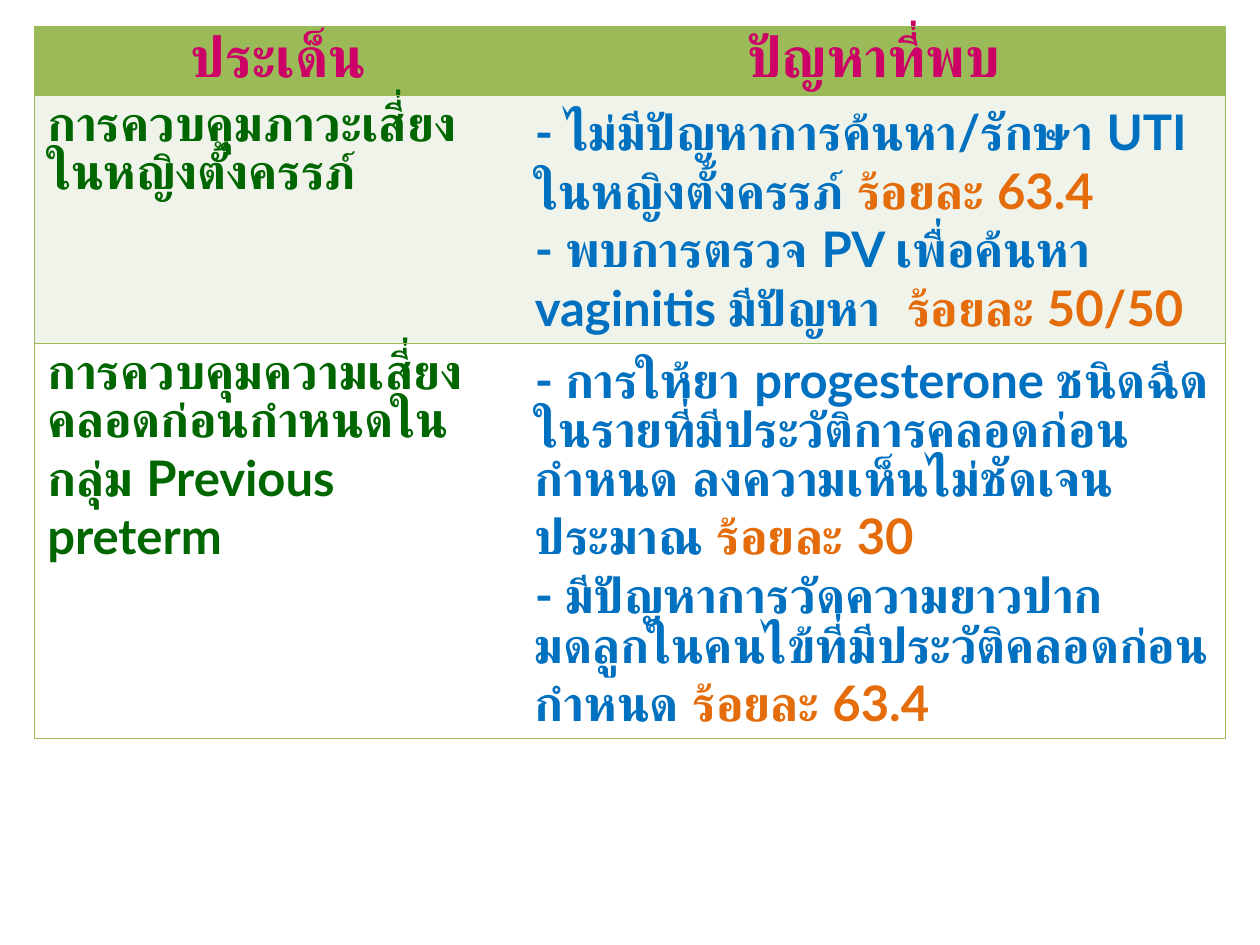
from dataclasses import dataclass

from lxml.etree import SubElement
from pptx import Presentation
from pptx.dml.color import RGBColor
from pptx.enum.text import PP_ALIGN as Align
from pptx.oxml.ns import qn
from pptx.util import Cm, Pt


@dataclass(frozen=True)
class Theme:
    font: str = "Lato"
    heading_size: int = 32
    body_size: int = 28
    heading: str = "CC0066"
    topic: str = "006600"
    finding: str = "0070C0"
    figure: str = "E46C0A"
    header_fill: str = "9BBB59"
    band_fill: str = "EFF3EA"
    plain_fill: str = "FFFFFF"
    border: str = "9BBB59"
    border_width: int = 1


@dataclass(frozen=True)
class Finding:
    text: str
    figure: str


@dataclass(frozen=True)
class Issue:
    topic: str
    findings: tuple[Finding, ...]
    fill: str


THEME = Theme()
COLUMN_WIDTHS = (9.83, 14.17)
ROW_HEIGHTS = (1.4, 5, 7.96)
HEADINGS = ("ประเด็น", "ปัญหาที่พบ")
ISSUES = (
    Issue(
        "การควบคุมภาวะเสี่ยงในหญิงตั้งครรภ์",
        (
            Finding("- ไม่มีปัญหาการค้นหา/รักษา UTI ในหญิงตั้งครรภ์ ", "ร้อยละ 63.4"),
            Finding("- พบการตรวจ PV เพื่อค้นหา vaginitis มีปัญหา  ", "ร้อยละ 50/50"),
        ),
        THEME.band_fill,
    ),
    Issue(
        "การควบคุมความเสี่ยงคลอดก่อนกำหนดในกลุ่ม Previous preterm",
        (
            Finding(
                "- การให้ยา progesterone ชนิดฉีดในรายที่มีประวัติการคลอดก่อนกำหนด "
                "ลงความเห็นไม่ชัดเจน ประมาณ ",
                "ร้อยละ 30",
            ),
            Finding(
                "- มีปัญหาการวัดความยาวปาก มดลูกในคนไข้ที่มีประวัติคลอดก่อนกำหนด ",
                "ร้อยละ 63.4",
            ),
        ),
        THEME.plain_fill,
    ),
)


def add_text(paragraph, text: str, *, color: str, size: int = THEME.body_size,
             align: Align = Align.LEFT) -> None:
    paragraph.alignment = align
    run = paragraph.add_run()
    run.text = text
    run.font.name = THEME.font
    run.font.size = Pt(size)
    run.font.bold = True
    run.font.color.rgb = RGBColor.from_string(color)


def style_cell(cell, fill: str, outer_side: str) -> None:
    cell.fill.solid()
    cell.fill.fore_color.rgb = RGBColor.from_string(fill)
    properties = cell._tc.get_or_add_tcPr()
    for position, side in enumerate(("L", "R", "T", "B")):
        line = SubElement(properties, qn(f"a:ln{side}"), w=str(Pt(THEME.border_width)))
        if side in (outer_side, "T", "B"):
            solid = SubElement(line, qn("a:solidFill"))
            SubElement(solid, qn("a:srgbClr"), val=THEME.border)
        else:
            SubElement(line, qn("a:noFill"))
        properties.insert(position, line)


def add_issue(row, issue: Issue) -> None:
    topic_cell, findings_cell = row.cells
    add_text(topic_cell.text_frame.paragraphs[0], issue.topic, color=THEME.topic)
    frame = findings_cell.text_frame
    for index, finding in enumerate(issue.findings):
        paragraph = frame.add_paragraph() if index else frame.paragraphs[0]
        add_text(paragraph, finding.text, color=THEME.finding)
        add_text(paragraph, finding.figure, color=THEME.figure)


def add_issue_table(slide) -> None:
    table = slide.shapes.add_table(
        len(ROW_HEIGHTS), len(COLUMN_WIDTHS), Cm(0.7), Cm(0.53),
        Cm(sum(COLUMN_WIDTHS)), Cm(sum(ROW_HEIGHTS)),
    ).table
    table.horz_banding = False
    for column, width in zip(table.columns, COLUMN_WIDTHS):
        column.width = Cm(width)
    for row, height in zip(table.rows, ROW_HEIGHTS):
        row.height = Cm(height)

    header, *body = table.rows
    for cell, heading in zip(header.cells, HEADINGS):
        add_text(cell.text_frame.paragraphs[0], heading, color=THEME.heading,
                 size=THEME.heading_size, align=Align.CENTER)
    for row, issue in zip(body, ISSUES):
        add_issue(row, issue)

    fills = (THEME.header_fill, *(issue.fill for issue in ISSUES))
    for row, fill in zip(table.rows, fills):
        for cell, outer_side in zip(row.cells, ("L", "R")):
            style_cell(cell, fill, outer_side)


def main() -> None:
    presentation = Presentation()
    presentation.slide_width = Cm(25.4)
    presentation.slide_height = Cm(19.05)
    slide = presentation.slides.add_slide(presentation.slide_layouts[6])
    add_issue_table(slide)
    presentation.save("out.pptx")


if __name__ == "__main__":
    main()
